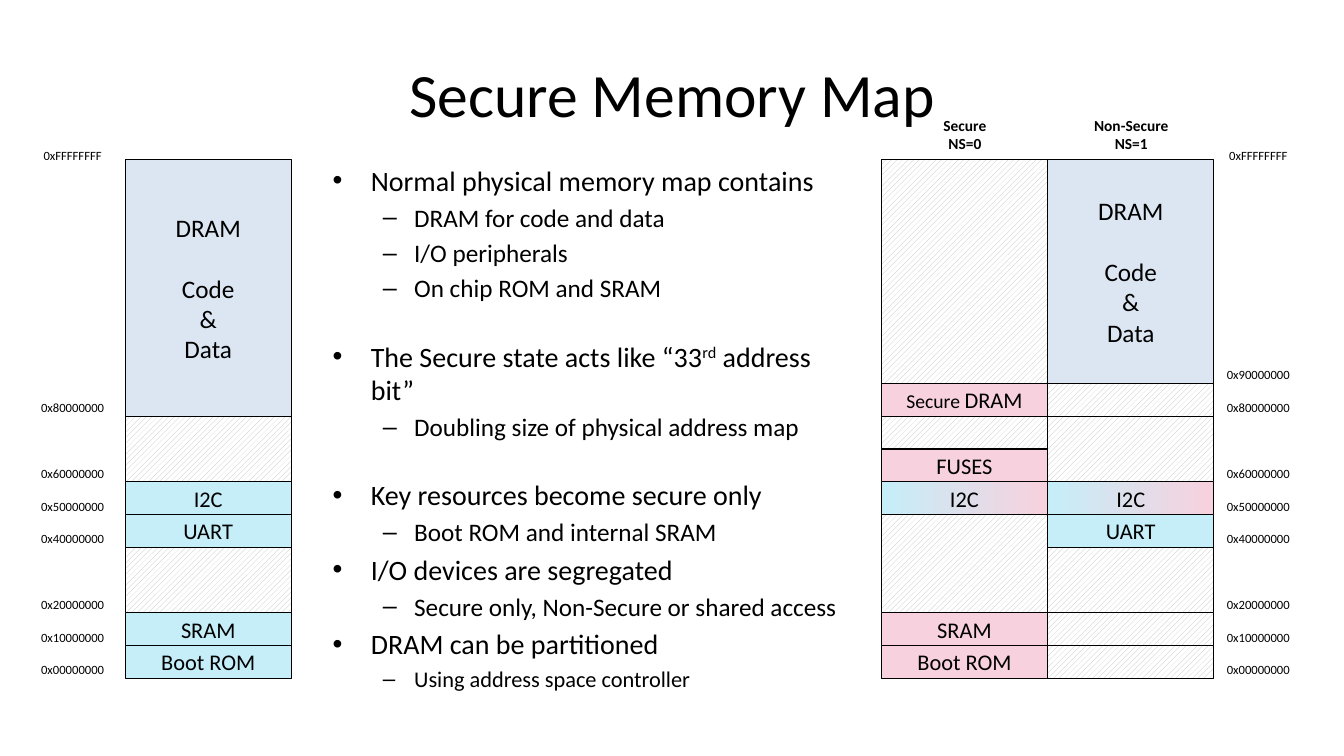
from dataclasses import dataclass

from lxml.etree import SubElement
from pptx import Presentation
from pptx.dml.color import RGBColor
from pptx.enum.dml import MSO_PATTERN
from pptx.enum.shapes import MSO_SHAPE
from pptx.enum.text import MSO_ANCHOR, PP_ALIGN
from pptx.oxml.ns import qn
from pptx.util import Inches, Pt


@dataclass(frozen=True)
class Theme:
    """Colours, type sizes and font of the slide."""
    font: str = "Calibri"
    ink: RGBColor = RGBColor(0x00, 0x00, 0x00)
    paper: RGBColor = RGBColor(0xFF, 0xFF, 0xFF)
    hatch: RGBColor = RGBColor(0xBF, 0xBF, 0xBF)
    memory: RGBColor = RGBColor(0xDC, 0xE6, 0xF2)
    device: RGBColor = RGBColor(0xC5, 0xEE, 0xF9)
    secure: RGBColor = RGBColor(0xF7, 0xD1, 0xDD)
    title: int = 44
    topic: int = 20
    detail: int = 18
    block: int = 16
    small_block: int = 14
    heading: int = 11
    address: int = 9


THEME = Theme()
MAP_TOP, MAP_BOTTOM = 1.58, 6.73
UNIT_HEIGHT = 0.65 / 2
COLUMN_WIDTH = 1.65
LABEL_WIDTH, LABEL_HEIGHT = 1.02, 0.26
TOP_ADDRESS = 16

DRAM = [("DRAM", 18, 0), ("Code", 18, 22), ("&", 18, 0), ("Data", 18, 0)]

NORMAL_MAP = [
    (0, 1, "device", "Boot ROM"), (1, 2, "device", "SRAM"), (2, 4, "hatch", ""),
    (4, 5, "device", "UART"), (5, 6, "device", "I2C"), (6, 8, "hatch", ""),
    (8, 16, "memory", DRAM),
]
SECURE_MAP = [
    (0, 1, "secure", "Boot ROM"), (1, 2, "secure", "SRAM"), (2, 5, "hatch", ""),
    (5, 6, "shared", "I2C"), (6, 7, "secure", "FUSES"), (7, 8, "hatch", ""),
    (8, 9, "secure", "Secure DRAM"), (9, 16, "hatch", ""),
]
NON_SECURE_MAP = [
    (0, 1, "hatch", ""), (1, 2, "hatch", ""), (2, 4, "hatch", ""),
    (4, 5, "device", "UART"), (5, 6, "shared", "I2C"), (6, 8, "hatch", ""),
    (8, 9, "hatch", ""), (9, 16, "memory", DRAM),
]
NORMAL_ADDRESSES = [0, 1, 2, 4, 5, 6, 8, 16]
SPLIT_ADDRESSES = [0, 1, 2, 4, 5, 6, 8, 9, 16]

TOPICS = [
    (["Normal physical memory map contains"],
     ["DRAM for code and data", "I/O peripherals", "On chip ROM and SRAM"], False),
    (["The Secure state acts like “33", "rd", " address bit”"],
     ["Doubling size of physical address map"], True),
    (["Key resources become secure only"], ["Boot ROM and internal SRAM"], True),
    (["I/O devices are segregated"], ["Secure only, Non-Secure or shared access"], False),
    (["DRAM can be partitioned"], ["Using address space controller"], False),
]


def write(paragraph, text, size, bold=False, superscript=False, align=None, before=0):
    """Append formatted text to a paragraph."""
    run = paragraph.add_run()
    run.text = text
    run.font.name = THEME.font
    run.font.size = Pt(size)
    run.font.bold = bold
    run.font.color.rgb = THEME.ink
    if superscript:
        run._r.get_or_add_rPr().set("baseline", "30000")
    if align is not None:
        paragraph.alignment = align
    paragraph.space_before = Pt(before)


def next_paragraph(frame):
    """Return the first paragraph while it is unused, otherwise a new one."""
    first = frame.paragraphs[0]
    return frame.add_paragraph() if first.runs else first


def add_bullet(paragraph, symbol, indent, hanging):
    """Give a paragraph a bullet symbol and a hanging indent."""
    properties = paragraph._p.get_or_add_pPr()
    properties.set("marL", str(Inches(indent)))
    properties.set("indent", str(-Inches(hanging)))
    SubElement(properties, qn("a:buFont")).set("typeface", "Arial")
    SubElement(properties, qn("a:buChar")).set("char", symbol)


def add_label(slide, left, top, width, height, lines, size, bold=False):
    """Place centred lines in a text box without insets."""
    frame = slide.shapes.add_textbox(
        Inches(left), Inches(top), Inches(width), Inches(height)).text_frame
    frame.word_wrap = True
    frame.margin_left = frame.margin_right = frame.margin_top = frame.margin_bottom = 0
    for line in lines:
        write(next_paragraph(frame), line, size, bold=bold, align=PP_ALIGN.CENTER)


def address_top(address):
    """Return the height on the slide of an address in units of 0x10000000."""
    return MAP_TOP if address == TOP_ADDRESS else MAP_BOTTOM - address * UNIT_HEIGHT


def fill_block(fill, kind):
    """Fill a block as hatched, shared or plain."""
    if kind == "hatch":
        fill.patterned()
        fill.pattern = MSO_PATTERN.WIDE_UPWARD_DIAGONAL
        fill.fore_color.rgb = THEME.hatch
        fill.back_color.rgb = THEME.paper
    elif kind == "shared":
        fill.gradient()
        fill.gradient_angle = 0
        for stop, position, color in zip(
                fill.gradient_stops, (0, 1), (THEME.device, THEME.secure)):
            stop.position = position
            stop.color.rgb = color
    else:
        fill.solid()
        fill.fore_color.rgb = getattr(THEME, kind)


def add_column(slide, left, blocks):
    """Stack the blocks of one memory map from its left edge."""
    for start, end, kind, label in blocks:
        top = address_top(end)
        shape = slide.shapes.add_shape(
            MSO_SHAPE.RECTANGLE, Inches(left), Inches(top),
            Inches(COLUMN_WIDTH), Inches(address_top(start) - top))
        shape.shadow.inherit = False
        fill_block(shape.fill, kind)
        shape.line.color.rgb = THEME.ink
        shape.line.width = Pt(0.75)
        frame = shape.text_frame
        frame.vertical_anchor = MSO_ANCHOR.MIDDLE
        if label == "Secure DRAM":
            paragraph = frame.paragraphs[0]
            write(paragraph, "Secure ", THEME.small_block, align=PP_ALIGN.CENTER)
            write(paragraph, "DRAM", THEME.block, align=PP_ALIGN.CENTER)
        elif label:
            lines = [(label, THEME.block, 0)] if isinstance(label, str) else label
            for text, size, before in lines:
                write(next_paragraph(frame), text, size,
                      align=PP_ALIGN.CENTER, before=before)


def add_addresses(slide, left, addresses):
    """Label the block boundaries beside a memory map."""
    for address in addresses:
        last = address == TOP_ADDRESS
        text = "0xFFFFFFFF" if last else f"0x{address}0000000"
        top = address_top(address) - (0.11 if last else 0.16)
        add_label(slide, left, top, LABEL_WIDTH, LABEL_HEIGHT, [text], THEME.address)


def add_title(slide, left, top, width, height):
    """Place the slide title in its box."""
    title = slide.shapes.title
    title.left, title.top = Inches(left), Inches(top)
    title.width, title.height = Inches(width), Inches(height)
    title.text_frame.vertical_anchor = MSO_ANCHOR.MIDDLE
    write(title.text_frame.paragraphs[0], "Secure Memory Map", THEME.title,
          align=PP_ALIGN.CENTER)


def add_topics(slide, left, top, width, height):
    """Place the two-level bullet list in its box."""
    frame = slide.shapes.add_textbox(
        Inches(left), Inches(top), Inches(width), Inches(height)).text_frame
    frame.word_wrap = True
    for parts, details, gap in TOPICS:
        paragraph = next_paragraph(frame)
        for part in parts:
            write(paragraph, part, THEME.topic, superscript=part == "rd",
                  before=26 if gap else 4)
        add_bullet(paragraph, "•", 0.38, 0.38)
        for detail in details:
            paragraph = frame.add_paragraph()
            paragraph.level = 1
            size = THEME.block if detail.startswith("Using") else THEME.detail
            write(paragraph, detail, size, before=size * 0.2)
            add_bullet(paragraph, "–", 0.81, 0.31)


def main():
    """Build and save the presentation."""
    presentation = Presentation()
    presentation.slide_width, presentation.slide_height = Inches(13.33), Inches(7.5)
    slide = presentation.slides.add_slide(presentation.slide_layouts[5])
    add_title(slide, 0.67, 0.3, 12, 1.25)
    add_topics(slide, 3.2, 1.57, 5.23, 5.12)
    add_column(slide, 1.24, NORMAL_MAP)
    add_addresses(slide, 0.21, NORMAL_ADDRESSES)
    for left, blocks, heading in (
            (8.74, SECURE_MAP, ["Secure", "NS=0"]),
            (8.74 + COLUMN_WIDTH, NON_SECURE_MAP, ["Non-Secure", "NS=1"])):
        add_column(slide, left, blocks)
        add_label(slide, left + 0.32, 1.15, LABEL_WIDTH, 0.54, heading,
                  THEME.heading, bold=True)
    add_addresses(slide, 11.97, SPLIT_ADDRESSES)
    presentation.save("out.pptx")


if __name__ == "__main__":
    main()
